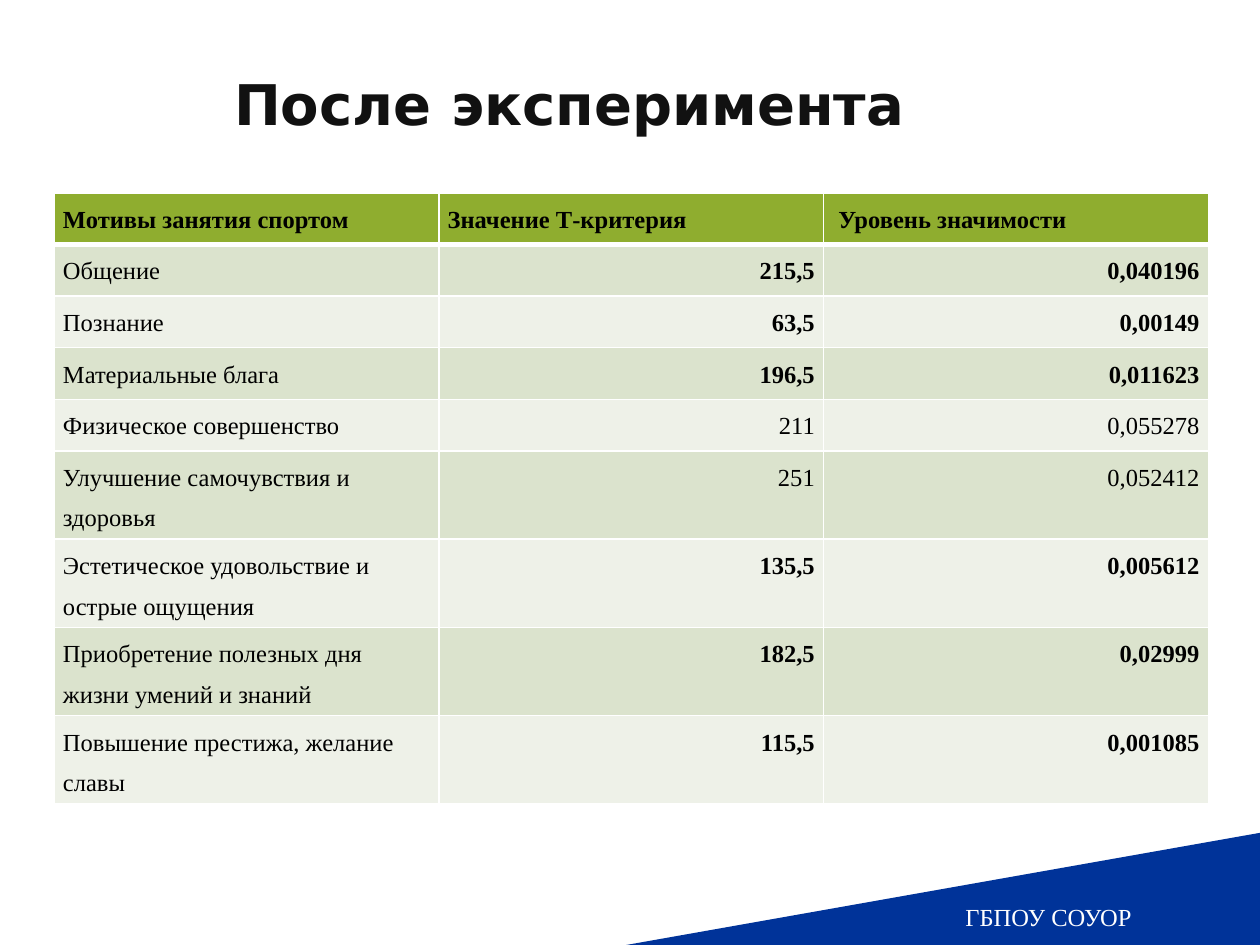
from pptx import Presentation
from pptx.dml.color import RGBColor
from pptx.enum.shapes import MSO_SHAPE
from pptx.enum.text import MSO_ANCHOR, PP_ALIGN
from pptx.oxml import parse_xml
from pptx.oxml.ns import nsdecls
from pptx.util import Inches, Pt

TITLE = "После эксперимента"
FOOTER = "ГБПОУ СОУОР"
HEADER = ("Мотивы занятия спортом", "Значение Т-критерия", " Уровень значимости")
# Motive, T value, significance level, whether the change is significant
MOTIVES = [
    ("Общение", "215,5", "0,040196", True),
    ("Познание", "63,5", "0,00149", True),
    ("Материальные блага", "196,5", "0,011623", True),
    ("Физическое совершенство", "211", "0,055278", False),
    ("Улучшение самочувствия и здоровья", "251", "0,052412", False),
    ("Эстетическое удовольствие и острые ощущения", "135,5", "0,005612", True),
    ("Приобретение полезных дня жизни умений и знаний", "182,5", "0,02999", True),
    ("Повышение престижа, желание славы", "115,5", "0,001085", True),
]
COLORS = {
    "title": "111111", "text": "000000", "white": "FFFFFF", "corner": "003399",
    "header": "8FAD2F", "odd": "DBE3CD", "even": "EEF1E8",
}
SERIF, SANS = "Times New Roman", "DejaVu Sans"


def rgb(name):
    return RGBColor.from_string(COLORS[name])


def write(frame, text, font, size, color, bold=False, align=PP_ALIGN.CENTER):
    frame.word_wrap = True
    para = frame.paragraphs[0]
    para.text = text
    para.alignment = align
    para.font.name = font
    para.font.size = Pt(size)
    para.font.bold = bold
    para.font.color.rgb = rgb(color)
    return para


def set_borders(cell, bottom):
    properties = cell._tc.get_or_add_tcPr()
    widths = {"lnL": 1, "lnR": 1, "lnT": 1, "lnB": bottom}
    for index, (side, points) in enumerate(widths.items()):
        properties.insert(index, parse_xml(
            f'<a:{side} {nsdecls("a")} w="{Pt(points)}"><a:solidFill>'
            f'<a:srgbClr val="{COLORS["white"]}"/></a:solidFill></a:{side}>'))


def fill_cell(cell, text, fill, bold, align, bottom=1):
    cell.fill.solid()
    cell.fill.fore_color.rgb = rgb(fill)
    cell.margin_left = cell.margin_right = Inches(0.07)
    cell.margin_top = cell.margin_bottom = 0
    write(cell.text_frame, text, SERIF, 14, "text", bold, align).line_spacing = 1.5
    set_borders(cell, bottom)


deck = Presentation()
deck.slide_width, deck.slide_height = Inches(10), Inches(7.5)
page = deck.slides.add_slide(deck.slide_layouts[6])

# Corner triangle with the school name
corner = page.shapes.add_shape(
    MSO_SHAPE.RIGHT_TRIANGLE, Inches(4.97), Inches(6.61), Inches(5.03), Inches(0.89))
corner._element.spPr.get_or_add_xfrm().set("flipH", "1")
corner.shadow.inherit = False
corner.fill.solid()
corner.fill.fore_color.rgb = rgb("corner")
corner.line.fill.background()
corner.text_frame.vertical_anchor = MSO_ANCHOR.MIDDLE
write(corner.text_frame, FOOTER, SERIF, 14, "white")

# Title
title = page.shapes.add_textbox(Inches(0.23), Inches(0.48), Inches(8.58), Inches(0.67))
title.text_frame.vertical_anchor = MSO_ANCHOR.MIDDLE
write(title.text_frame, TITLE, SANS, 32, "title", bold=True)

# Table: rows with two lines of text grow from the common height
frame = page.shapes.add_table(
    len(MOTIVES) + 1, len(HEADER), Inches(0.43), Inches(1.53), Inches(9.16), Inches(4.83))
table = frame.table
for row in table.rows:
    row.height = Inches(0.41)
frame.height = Inches(4.83)

for column, heading in enumerate(HEADER):
    fill_cell(table.cell(0, column), heading, "header", True, PP_ALIGN.LEFT, bottom=3)
for number, (motive, value, level, significant) in enumerate(MOTIVES, start=1):
    band = "odd" if number % 2 else "even"
    fill_cell(table.cell(number, 0), motive, band, False, PP_ALIGN.LEFT)
    for column, figure in enumerate((value, level), start=1):
        fill_cell(table.cell(number, column), figure, band, significant, PP_ALIGN.RIGHT)

deck.save("out.pptx")
